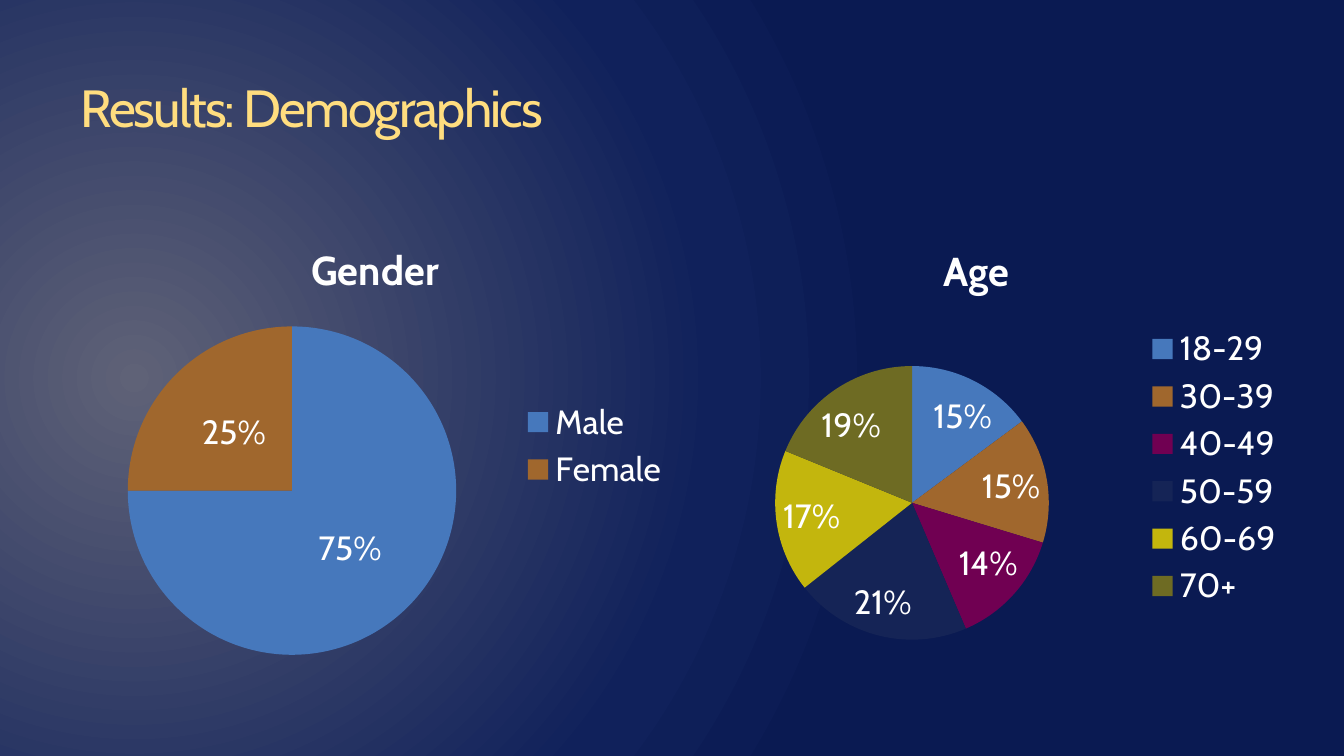
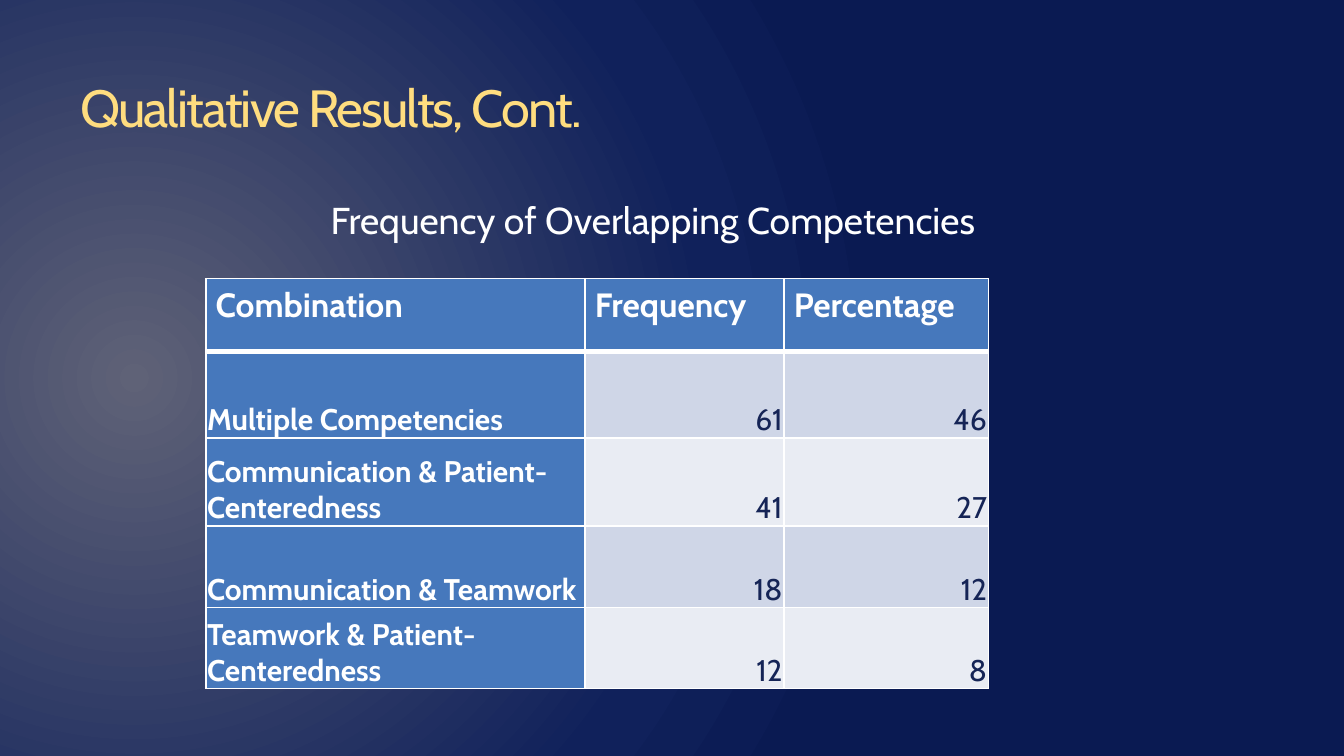
import dataclasses
import typing

import lxml.etree
import pptx
import pptx.chart.data
import pptx.dml.color
import pptx.enum.chart
import pptx.enum.text
import pptx.oxml
import pptx.oxml.ns
import pptx.util

RGBColor = pptx.dml.color.RGBColor
PX = 9525  # EMU in one px, 96 px to the inch
FONT = "Cabin"

WHITE = RGBColor(0xFF, 0xFF, 0xFF)
GOLD = RGBColor(0xFF, 0xDD, 0x7F)
BLUE = RGBColor(0x46, 0x78, 0xBC)
BROWN = RGBColor(0xA0, 0x67, 0x2D)
PLUM = RGBColor(0x70, 0x00, 0x52)
NAVY = RGBColor(0x15, 0x24, 0x56)
YELLOW = RGBColor(0xC3, 0xB6, 0x0D)
OLIVE = RGBColor(0x6E, 0x6B, 0x23)
BAND_DARK = RGBColor(0xCF, 0xD6, 0xE7)
BAND_LIGHT = RGBColor(0xE9, 0xEC, 0xF3)
SLICES = (BLUE, BROWN, PLUM, NAVY, YELLOW, OLIVE)

BACKDROP = (
    (0, RGBColor(0x5F, 0x62, 0x77)),
    (75, RGBColor(0x10, 0x21, 0x5B)),
    (100, RGBColor(0x0A, 0x1A, 0x52)),
)


@dataclasses.dataclass(frozen=True)
class Area:
    left: int
    top: int
    width: int
    height: int

    def emu(self) -> tuple[int, ...]:
        return tuple(side * PX for side in dataclasses.astuple(self))


@dataclasses.dataclass(frozen=True)
class Pie:
    name: str
    area: Area
    shares: dict[str, float]
    labels: dict[str, typing.Any]


@dataclasses.dataclass(frozen=True)
class CellStyle:
    fill: RGBColor
    colour: RGBColor
    size: int
    bold: bool
    cell: dict[str, typing.Any]
    para: dict[str, typing.Any]


TITLE_AREA = Area(48, 49, 878, 108)
CAPTION_AREA = Area(114, 136, 705, 42)
TABLE_AREA = Area(147, 199, 559, 293)
COLUMN_WIDTHS = (271, 142, 146)
ROW_HEIGHTS = (52, 62, 63, 58, 58)

POSITION = pptx.enum.chart.XL_LABEL_POSITION
PIES = (
    Pie("Gender", Area(48, 156, 440, 325), {"Male": 0.75, "Female": 0.25},
        {"show_value": True, "position": POSITION.CENTER}),
    Pie("Age", Area(468, 156, 459, 356),
        {"18-29": 15, "30-39": 15, "40-49": 14, "50-59": 21, "60-69": 17, "70+": 19},
        {"show_value": False, "show_percentage": True, "position": POSITION.BEST_FIT}),
)

COMPETENCIES = (
    ("Combination", "Frequency", "Percentage"),
    ("Multiple Competencies", "61", "46"),
    ("Communication & Patient-Centeredness", "41", "27"),
    ("Communication & Teamwork", "18", "12"),
    ("Teamwork & Patient-Centeredness", "12", "8"),
)

HEAD_CELL = {
    "margin_left": 7 * PX, "margin_right": 7 * PX, "margin_top": 0, "margin_bottom": 0,
    "vertical_anchor": pptx.enum.text.MSO_ANCHOR.TOP,
}
BODY_CELL = {
    "margin_left": PX, "margin_right": PX, "margin_top": PX, "margin_bottom": 0,
    "vertical_anchor": pptx.enum.text.MSO_ANCHOR.BOTTOM,
}
RIGHT = {"alignment": pptx.enum.text.PP_ALIGN.RIGHT}
HEAD = CellStyle(BLUE, WHITE, 18, True, HEAD_CELL,
                 {"line_spacing": 1.15, "space_after": pptx.util.Pt(10)})
ROW_NAME = CellStyle(BLUE, WHITE, 16, True, BODY_CELL, {})
DARK_NUMBER = CellStyle(BAND_DARK, NAVY, 16, False, BODY_CELL, RIGHT)
LIGHT_NUMBER = dataclasses.replace(DARK_NUMBER, fill=BAND_LIGHT)


def set_values(target: typing.Any, values: dict[str, typing.Any]) -> None:
    for name, value in values.items():
        setattr(target, name, value)


def set_font(font: typing.Any, size: float, colour: RGBColor, bold: bool = False) -> None:
    set_values(font, {"name": FONT, "size": pptx.util.Pt(size), "bold": bold})
    font.color.rgb = colour


def paint_backdrop(page: typing.Any) -> None:
    """Fill the page with a round gradient centred near the left edge."""
    page.background.fill.solid()
    fill = page.element.find(".//" + pptx.oxml.ns.qn("p:bgPr"))
    stops = "".join(
        f'<a:gs pos="{place * 1000}"><a:srgbClr val="{colour}"/></a:gs>'
        for place, colour in BACKDROP
    )
    fill.replace(fill[0], pptx.oxml.parse_xml(
        f'<a:gradFill {pptx.oxml.ns.nsdecls("a")} rotWithShape="1">'
        f'<a:gsLst>{stops}</a:gsLst><a:path path="circle">'
        '<a:fillToRect l="20000" t="50000" r="100000" b="50000"/>'
        "</a:path></a:gradFill>"))


def add_text(page: typing.Any, area: Area, text: str, size: int, colour: RGBColor,
             para_values: dict[str, typing.Any]) -> typing.Any:
    box = page.shapes.add_textbox(*area.emu())
    box.text_frame.word_wrap = True
    para = box.text_frame.paragraphs[0]
    set_values(para, para_values)
    span = para.add_run()
    span.text = text
    set_font(span.font, size, colour)
    return span


def add_page(deck: typing.Any, title: str) -> typing.Any:
    page = deck.slides.add_slide(deck.slide_layouts[6])
    paint_backdrop(page)
    span = add_text(page, TITLE_AREA, title, 28, GOLD, {})
    span.font._element.set("spc", "-100")
    return page


def add_pie(page: typing.Any, pie: Pie) -> None:
    data = pptx.chart.data.CategoryChartData()
    data.categories = list(pie.shares)
    data.add_series(pie.name, list(pie.shares.values()))
    chart = page.shapes.add_chart(
        pptx.enum.chart.XL_CHART_TYPE.PIE, *pie.area.emu(), data).chart
    set_font(chart.font, 18, WHITE)

    chart.has_title = True
    span = chart.chart_title.text_frame.paragraphs[0].add_run()
    span.text = pie.name
    set_font(span.font, 21.6, WHITE, True)

    chart.has_legend = True
    set_values(chart.legend, {
        "position": pptx.enum.chart.XL_LEGEND_POSITION.RIGHT,
        "include_in_layout": False,
    })
    set_font(chart.legend.font, 18, WHITE)

    plot = chart.plots[0]
    set_values(plot, {"vary_by_categories": True, "has_data_labels": True})
    set_values(plot.data_labels, {
        "number_format": "0%", "number_format_is_linked": False, **pie.labels})
    set_font(plot.data_labels.font, 18, WHITE)
    for index, colour in zip(range(len(pie.shares)), SLICES):
        look = plot.series[0].points[index].format
        look.fill.solid()
        look.fill.fore_color.rgb = colour
        look.line.fill.background()


def set_borders(cell: typing.Any, widths: dict[str, int]) -> None:
    """Draw white cell edges; widths are points, keyed L, R, T, B in that order."""
    properties = cell._tc.get_or_add_tcPr()
    for index, (side, width) in enumerate(widths.items()):
        properties.insert(index, pptx.oxml.parse_xml(
            f'<a:ln{side} {pptx.oxml.ns.nsdecls("a")} w="{width * 12700}">'
            f'<a:solidFill><a:srgbClr val="{WHITE}"/></a:solidFill></a:ln{side}>'))


def cell_style(row: int, column: int) -> CellStyle:
    if row == 0:
        return HEAD
    if column == 0:
        return ROW_NAME
    return DARK_NUMBER if row % 2 else LIGHT_NUMBER


def fill_cell(cell: typing.Any, text: str, style: CellStyle) -> None:
    cell.fill.solid()
    cell.fill.fore_color.rgb = style.fill
    set_values(cell, style.cell)
    para = cell.text_frame.paragraphs[0]
    set_values(para, style.para)
    span = para.add_run()
    span.text = text
    set_font(span.font, style.size, style.colour, style.bold)


def add_competency_table(page: typing.Any) -> None:
    table = page.shapes.add_table(
        len(ROW_HEIGHTS), len(COLUMN_WIDTHS), *TABLE_AREA.emu()).table
    for column, width in zip(table.columns, COLUMN_WIDTHS):
        column.width = width * PX
    for row, height in zip(table.rows, ROW_HEIGHTS):
        row.height = height * PX
    for row, texts in enumerate(COMPETENCIES):
        for column, text in enumerate(texts):
            cell = table.cell(row, column)
            fill_cell(cell, text, cell_style(row, column))
            set_borders(cell, {"L": 1, "R": 1, "T": 3 if row == 1 else 1,
                               "B": 3 if row == 0 else 1})


def main() -> None:
    deck = pptx.Presentation()
    set_values(deck, {"slide_width": 960 * PX, "slide_height": 540 * PX})

    demographics = add_page(deck, "Results: Demographics")
    for pie in PIES:
        add_pie(demographics, pie)

    overlaps = add_page(deck, "Qualitative Results, Cont.")
    add_competency_table(overlaps)
    add_text(overlaps, CAPTION_AREA, "Frequency of Overlapping Competencies", 20, WHITE,
             {"alignment": pptx.enum.text.PP_ALIGN.CENTER})

    deck.save("out.pptx")


if __name__ == "__main__":
    main()
